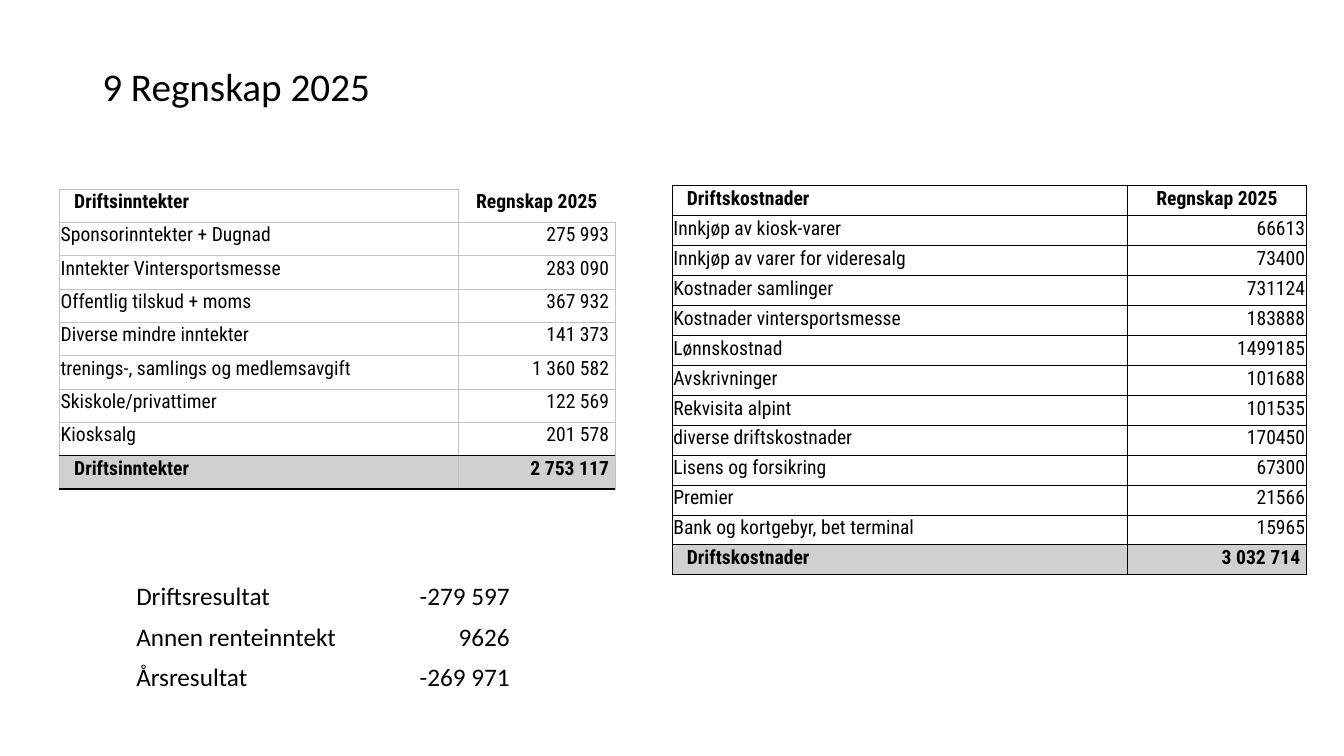
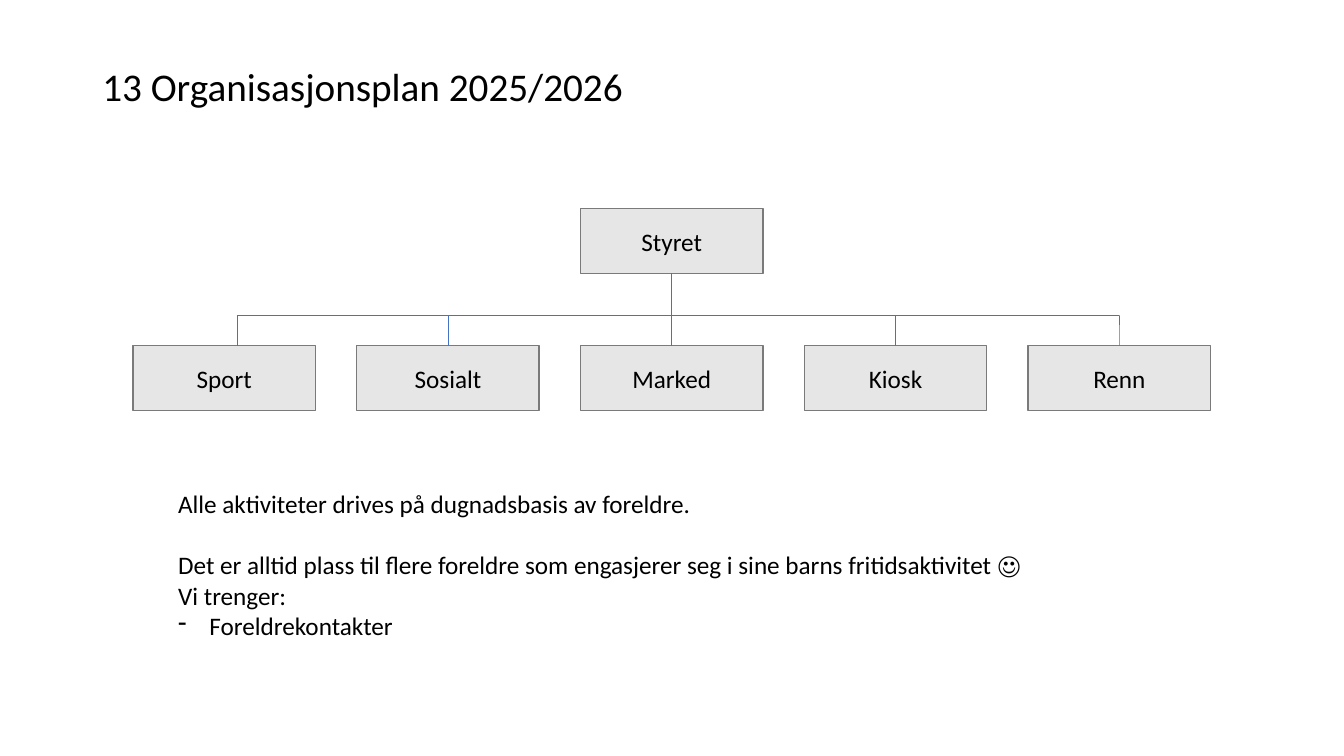
from lxml.etree import SubElement
from pptx import Presentation
from pptx.dml.color import RGBColor
from pptx.enum.shapes import MSO_CONNECTOR, MSO_SHAPE
from pptx.enum.text import MSO_ANCHOR, PP_ALIGN
from pptx.oxml.ns import qn
from pptx.util import Cm, Pt

BLACK = RGBColor(0x00, 0x00, 0x00)
GRID = RGBColor(0xC2, 0xC2, 0xC2)
TOTAL_FILL = RGBColor(0xD0, 0xD0, 0xD0)
BOX_FILL = RGBColor(0xE7, 0xE6, 0xE6)
BOX_LINE = RGBColor(0x7A, 0x7A, 0x7A)
BLUE = RGBColor(0x44, 0x72, 0xC4)
BODY_FONT = "Calibri"
TABLE_FONT = "Roboto Condensed"
PLAIN_TABLE = "{2D5ABB26-0587-4C30-8999-92F81FD0307C}"


class Deck:
    """Shared style and the slide being built."""

    def __init__(self):
        self.prs = Presentation()
        self.prs.slide_width, self.prs.slide_height = Cm(33.87), Cm(19.05)
        self.s = None

    def slide(self, title):
        self.s = self.prs.slides.add_slide(self.prs.slide_layouts[6])
        tf = self.textbox(2.33, 1.01, 29.21, 2.45)
        tf.word_wrap = True
        tf.vertical_anchor = MSO_ANCHOR.MIDDLE
        tf.paragraphs[0].line_spacing = 0.9
        self.run(tf.paragraphs[0], title, size=28)

    def run(self, p, text, size=18, font=BODY_FONT, bold=False):
        r = p.add_run()
        r.text = text
        r.font.size, r.font.name, r.font.bold = Pt(size), font, bold
        r.font.color.rgb = BLACK

    def textbox(self, x, y, w, h):
        return self.s.shapes.add_textbox(Cm(x), Cm(y), Cm(w), Cm(h)).text_frame

    def bullet(self, p, char, indent):
        pPr = p._p.get_or_add_pPr()
        pPr.set("marL", str(Cm(indent)))
        pPr.set("indent", str(-Cm(indent)))
        SubElement(pPr, qn("a:buChar"), char=char)

    def box(self, x, y, w, h, text):
        sp = self.s.shapes.add_shape(MSO_SHAPE.RECTANGLE, Cm(x), Cm(y), Cm(w), Cm(h))
        sp.shadow.inherit = False
        sp.fill.solid()
        sp.fill.fore_color.rgb = BOX_FILL
        sp.line.color.rgb, sp.line.width = BOX_LINE, Pt(1)
        sp.text_frame.vertical_anchor = MSO_ANCHOR.MIDDLE
        p = sp.text_frame.paragraphs[0]
        p.alignment = PP_ALIGN.CENTER
        self.run(p, text)
        return sp

    def line(self, x1, y1, x2, y2, begin=None, end=None):
        """Straight line; begin and end are (shape, site) pairs."""
        cn = self.s.shapes.add_connector(
            MSO_CONNECTOR.STRAIGHT, Cm(x1), Cm(y1), Cm(x2), Cm(y2))
        if begin:
            cn.begin_connect(*begin)
        if end:
            cn.end_connect(*end)
        cn.line.color.rgb, cn.line.width = BLUE, Pt(0.5)
        SubElement(cn._element.spPr, qn("a:effectLst"))

    def border(self, cell, sides, color=None, width=0.5):
        """Set the given sides (letters of LRTB); no colour means no line."""
        tcPr = cell._tc.get_or_add_tcPr()
        for side in sides:
            tag = qn("a:ln" + side)
            ln = tcPr.find(tag)
            if ln is None:
                ln = SubElement(tcPr, tag)
            ln.clear()
            ln.set("w", str(Pt(width)))
            if color is None:
                SubElement(ln, qn("a:noFill"))
            else:
                fill = SubElement(ln, qn("a:solidFill"))
                SubElement(fill, qn("a:srgbClr"), val=str(color))

    def table(self, x, y, widths, row_h, rows, size, font, anchor, grid=None):
        frame = self.s.shapes.add_table(
            len(rows), len(widths), Cm(x), Cm(y), Cm(sum(widths)), Cm(row_h * len(rows)))
        tbl = frame.table
        tbl.first_row = tbl.horz_banding = False
        tbl._tbl.tblPr.find(qn("a:tableStyleId")).text = PLAIN_TABLE
        for col, w in zip(tbl.columns, widths):
            col.width = Cm(w)
        for row, texts in zip(tbl.rows, rows):
            row.height = Cm(row_h)
            for c, (cell, text) in enumerate(zip(row.cells, texts)):
                self.border(cell, "LRTB", grid)
                cell.fill.background()
                cell.vertical_anchor = anchor
                p = cell.text_frame.paragraphs[0]
                p.alignment = PP_ALIGN.RIGHT if c else PP_ALIGN.LEFT
                self.run(p, text, size, font)
        return tbl

    def account(self, x, y, widths, row_h, rows, anchor, grid, pad):
        """Ledger table with a bold header row and a shaded total row."""
        tbl = self.table(x, y, widths, row_h, rows, 14, TABLE_FONT, anchor, grid)
        last = len(rows) - 1
        for i, row in enumerate(tbl.rows):
            label, amount = row.cells
            for cell in row.cells:
                cell.margin_left = cell.margin_right = cell.margin_top = Cm(0.03)
                cell.margin_bottom = Cm(0.13)
            if 0 < i:
                amount.margin_right = Cm(0.15 if i == last else pad)
            if i in (0, last):
                label.margin_left = Cm(0.37)
                for cell in row.cells:
                    cell.text_frame.paragraphs[0].runs[0].font.bold = True
            if i == 0:
                amount.vertical_anchor = MSO_ANCHOR.TOP
                amount.text_frame.paragraphs[0].alignment = PP_ALIGN.CENTER
            if i == last:
                for cell in row.cells:
                    cell.vertical_anchor = MSO_ANCHOR.TOP
                    cell.fill.solid()
                    cell.fill.fore_color.rgb = TOTAL_FILL
        return tbl


INCOME = [
    ("Driftsinntekter", "Regnskap 2025"),
    ("Sponsorinntekter + Dugnad", "275 993"),
    ("Inntekter Vintersportsmesse", "283 090"),
    ("Offentlig tilskud + moms", "367 932"),
    ("Diverse mindre inntekter", "141 373"),
    ("trenings-, samlings og medlemsavgift", "1 360 582"),
    ("Skiskole/privattimer", "122 569"),
    ("Kiosksalg", "201 578"),
    ("Driftsinntekter", "2 753 117"),
]
COSTS = [
    ("Driftskostnader", "Regnskap 2025"),
    ("Innkjøp av kiosk-varer", "66613"),
    ("Innkjøp av varer for videresalg", "73400"),
    ("Kostnader samlinger", "731124"),
    ("Kostnader vintersportsmesse", "183888"),
    ("Lønnskostnad", "1499185"),
    ("Avskrivninger", "101688"),
    ("Rekvisita alpint", "101535"),
    ("diverse driftskostnader", "170450"),
    ("Lisens og forsikring", "67300"),
    ("Premier", "21566"),
    ("Bank og kortgebyr, bet terminal", "15965"),
    ("Driftskostnader", "3 032 714"),
]
RESULT = [
    ("Driftsresultat", "-279 597"),
    ("Annen renteinntekt", "9626"),
    ("Årsresultat", "-269 971"),
]


def accounts(d):
    d.slide("9 Regnskap 2025")

    # Income, with an open header corner and ruled total
    tbl = d.account(1.5, 4.76, (10.06, 3.94), 0.84, INCOME, MSO_ANCHOR.TOP, GRID, 0.15)
    d.border(tbl.cell(0, 1), "RT")
    last = len(INCOME) - 1
    for c in range(2):
        d.border(tbl.cell(last - 1, c), "B", BLACK)
        d.border(tbl.cell(last, c), "T", BLACK)
        d.border(tbl.cell(last, c), "B", BLACK, 1)

    # Costs
    d.account(16.94, 4.68, (11.48, 4.5), 0.74, COSTS, MSO_ANCHOR.BOTTOM, BLACK, 0.03)

    # Result
    d.table(3.18, 14.53, (7.13, 2.79), 1.02, RESULT, 18, BODY_FONT, MSO_ANCHOR.MIDDLE)


def organisation(d):
    d.slide("13 Organisasjonsplan 2025/2026")

    # Board and its five groups
    w, h, left, pitch = 4.6, 1.63, 3.35, 5.64
    board_y, group_y, bar_y = 5.26, 8.71, 7.95
    names = ("Sport", "Sosialt", "Marked", "Kiosk", "Renn")
    groups = [d.box(left + i * pitch, group_y, w, h, name) for i, name in enumerate(names)]
    board = d.box(left + 2 * pitch, board_y, w, h, "Styret")

    # Bar, trunk and stems; the first stem stands right of its box centre
    centres = [left + i * pitch + w / 2 for i in range(len(names))]
    first_x = 5.97
    d.line(first_x, bar_y, centres[-1], bar_y)
    d.line(centres[2], board_y + h, centres[2], group_y, (board, 2), (groups[2], 0))
    d.line(first_x, group_y, first_x, bar_y)
    for i in (1, 3, 4):
        d.line(centres[i], group_y, centres[i], bar_y, (groups[i], 0))

    # Call for volunteers
    tf = d.textbox(4.24, 12.19, 22.1, 4.88)
    tf.word_wrap = False
    d.run(tf.paragraphs[0], "Alle aktiviteter drives på dugnadsbasis av foreldre.")
    p = tf.add_paragraph()
    p.space_before = Pt(22)
    d.run(p, "Det er alltid plass til flere foreldre som engasjerer seg "
             "i sine barns fritidsaktivitet ☺")
    p.add_line_break()
    d.run(p, "Vi trenger:")
    p = tf.add_paragraph()
    d.bullet(p, "-", 0.79)
    d.run(p, "Foreldrekontakter")


def main():
    d = Deck()
    accounts(d)
    organisation(d)
    d.prs.save("out.pptx")


if __name__ == "__main__":
    main()
